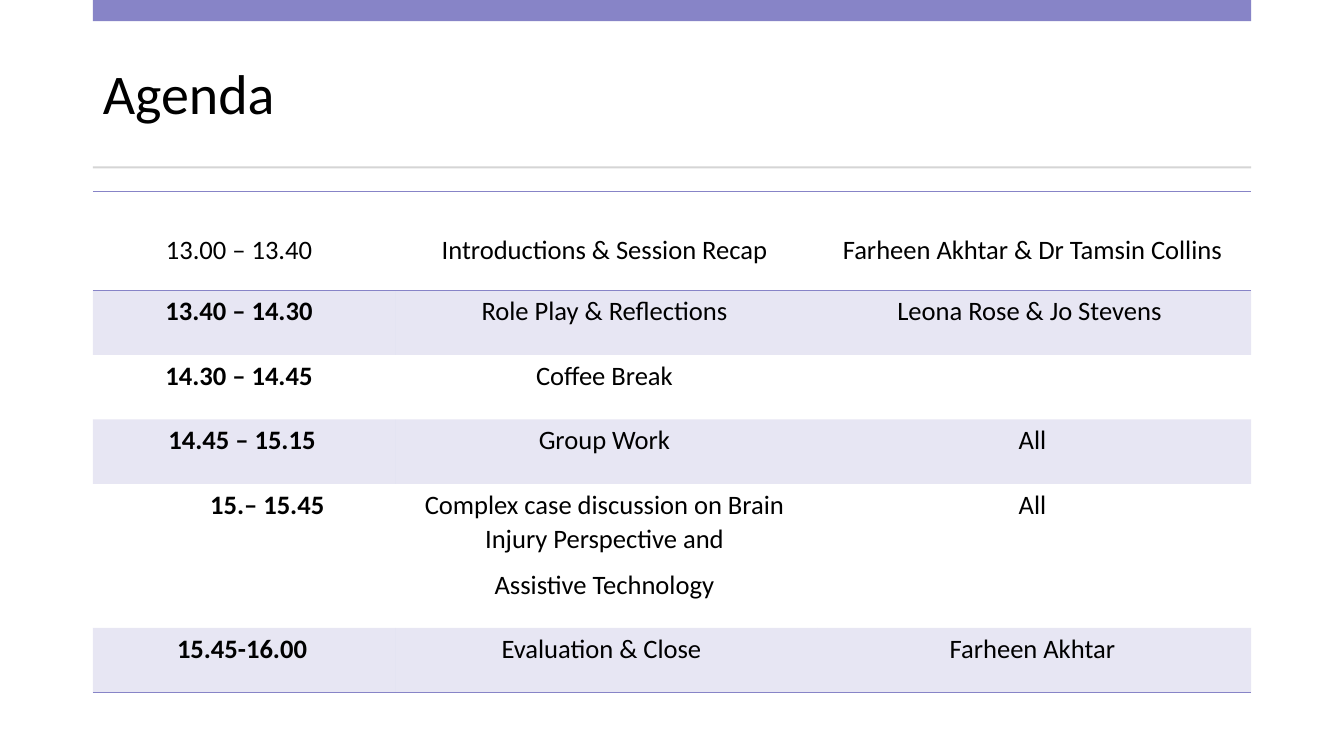
"""Build the agenda slide with its timetable."""
from lxml import etree
from pptx import Presentation
from pptx.dml.color import RGBColor
from pptx.enum.shapes import MSO_SHAPE
from pptx.enum.text import MSO_ANCHOR, PP_ALIGN
from pptx.oxml.ns import qn
from pptx.util import Inches, Pt

RECTANGLE = MSO_SHAPE.RECTANGLE
TOP, MIDDLE, BOTTOM = MSO_ANCHOR.TOP, MSO_ANCHOR.MIDDLE, MSO_ANCHOR.BOTTOM
LEFT, CENTER = PP_ALIGN.LEFT, PP_ALIGN.CENTER
PURPLE, GREY, BLACK = "8784C7", "D5D5D5", "000000"
NO_GRID_STYLE = "{2D5ABB26-0587-4C30-8999-92F81FD0307C}"
MARGIN, CONTENT_WIDTH = 0.92, 11.49


def paint(fill, color):
    fill.solid()
    fill.fore_color.rgb = RGBColor.from_string(color)


def write(frame, text, size=19, bold=False, align=CENTER, spacing=1.07, after=8):
    frame.text = text
    for paragraph in frame.paragraphs:
        paragraph.alignment = align
        paragraph.line_spacing = spacing
        paragraph.space_before = Pt(0)
        paragraph.space_after = Pt(after)
        for run in paragraph.runs:
            run.font.name = "Calibri"
            run.font.size = Pt(size)
            run.font.bold = bold
            run.font.color.rgb = RGBColor.from_string(BLACK)


sessions = [
    ("13.00 – 13.40 ", "Introductions & Session Recap", "Farheen Akhtar & Dr Tamsin Collins"),
    ("13.40 – 14.30 ", "Role Play & Reflections", "Leona Rose & Jo Stevens "),
    ("14.30 – 14.45 ", "Coffee Break", ""),
    ("14.45 – 15.15", "Group Work", "All"),
    ("– 15.45", "Complex case discussion on Brain Injury Perspective and\nAssistive Technology", "All"),
    ("15.45-16.00", "Evaluation & Close ", "Farheen Akhtar"),
]
column_widths = [3, 4.19, 4.3]
row_heights = [0.98, 0.64, 0.64, 0.64, 1.43, 0.64]
row_borders = {0: ("a:lnT", "a:lnB"), len(sessions) - 1: ("a:lnB",)}
numbered_row = 4

prs = Presentation()
prs.slide_width, prs.slide_height = Inches(13.33), Inches(7.5)
slide = prs.slides.add_slide(prs.slide_layouts[5])

title = slide.shapes.title
title.left, title.top = Inches(MARGIN), Inches(0.37)
title.width, title.height = Inches(CONTENT_WIDTH), Inches(1.18)
title.text_frame.vertical_anchor = MIDDLE
write(title.text_frame, "Agenda", size=40, align=LEFT, spacing=0.9, after=0)

for top, height, color in [(0, 0.21, PURPLE), (1.65, 0.02, GREY)]:
    band = slide.shapes.add_shape(
        RECTANGLE, Inches(MARGIN), Inches(top), Inches(CONTENT_WIDTH), Inches(height))
    band.shadow.inherit = False
    band.line.fill.background()
    paint(band.fill, color)

timetable = slide.shapes.add_table(
    len(sessions), len(column_widths), Inches(MARGIN), Inches(1.9),
    Inches(sum(column_widths)), Inches(sum(row_heights))).table
timetable.horz_banding = False
timetable._tbl.tblPr.find(qn("a:tableStyleId")).text = NO_GRID_STYLE
for column, width in zip(timetable.columns, column_widths):
    column.width = Inches(width)

for row_index, (session, height) in enumerate(zip(sessions, row_heights)):
    timetable.rows[row_index].height = Inches(height)
    for column_index, entry in enumerate(session):
        cell = timetable.cell(row_index, column_index)
        cell.margin_left, cell.margin_right = Inches(0.11), Inches(0.15)
        cell.margin_top, cell.margin_bottom = Inches(0.03), Inches(0.24)
        cell.vertical_anchor = TOP if row_index else BOTTOM
        write(cell.text_frame, entry, bold=row_index > 0 and column_index == 0)

        properties = cell._tc.get_or_add_tcPr()
        for side in row_borders.get(row_index, ()):
            border = etree.SubElement(properties, qn(side), w=str(Pt(1)))
            border_fill = etree.SubElement(border, qn("a:solidFill"))
            etree.SubElement(border_fill, qn("a:srgbClr"), val=PURPLE)

        if row_index % 2:
            paint(cell.fill, PURPLE)
            tint = properties.find(qn("a:solidFill")).find(qn("a:srgbClr"))
            etree.SubElement(tint, qn("a:alpha"), val="20000")
        else:
            cell.fill.background()

numbered_time = timetable.cell(numbered_row, 0).text_frame.paragraphs[0]
numbered_time.level = 1
numbering = numbered_time._p.get_or_add_pPr()
numbering.set("marL", str(Inches(0.81)))
numbering.set("indent", str(Inches(-0.31)))
etree.SubElement(numbering, qn("a:buAutoNum"), type="arabicPeriod", startAt="15")

prs.save("out.pptx")
